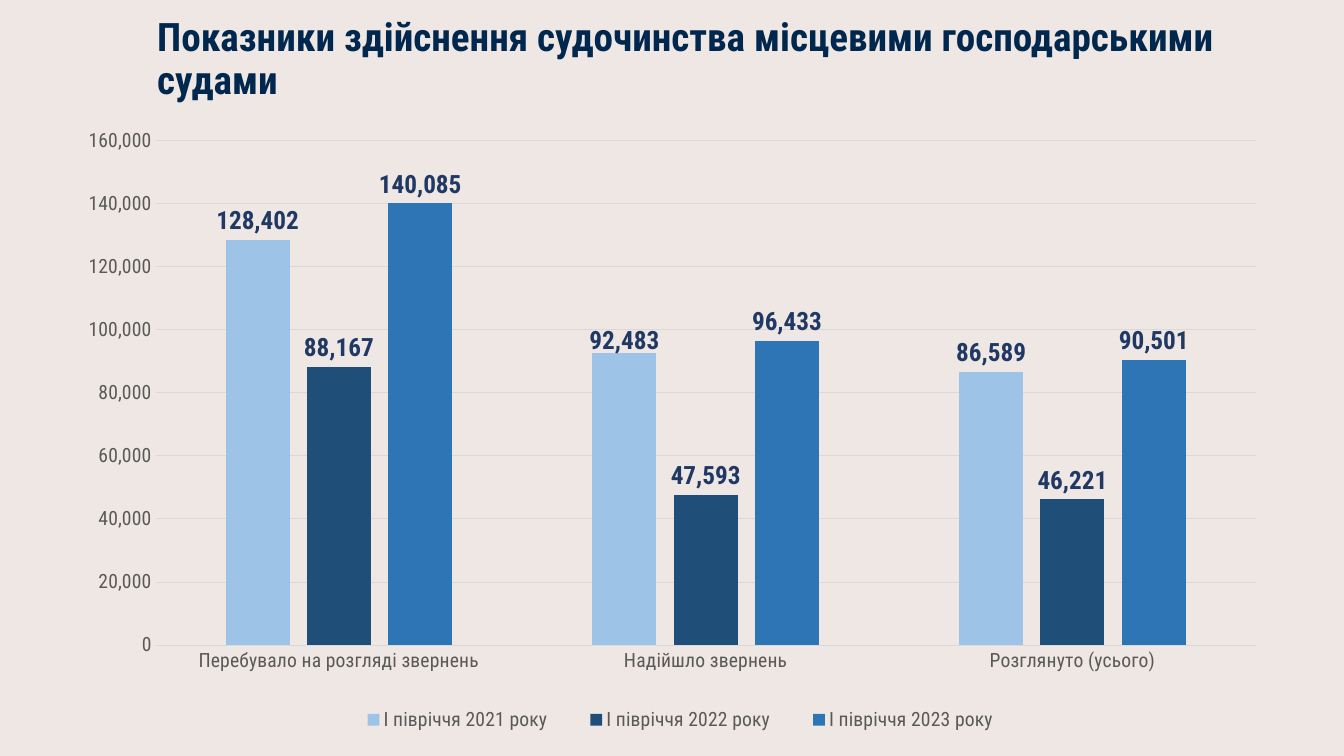
from dataclasses import dataclass

from lxml import etree
from pptx import Presentation
from pptx.chart.data import CategoryChartData
from pptx.dml.color import RGBColor
from pptx.enum.chart import XL_CHART_TYPE, XL_LABEL_POSITION, XL_LEGEND_POSITION, XL_TICK_MARK
from pptx.enum.text import MSO_ANCHOR, MSO_AUTO_SIZE, PP_ALIGN
from pptx.util import Inches, Pt

COLUMNS = XL_CHART_TYPE.COLUMN_CLUSTERED
OUTSIDE_END = XL_LABEL_POSITION.OUTSIDE_END
BOTTOM = XL_LEGEND_POSITION.BOTTOM
NO_TICK = XL_TICK_MARK.NONE
MIDDLE = MSO_ANCHOR.MIDDLE
NO_FIT = MSO_AUTO_SIZE.NONE
LEFT = PP_ALIGN.LEFT

WIDTH, HEIGHT = Inches(13.33), Inches(7.5)
TITLE_ONLY = 5
FONT = "Roboto Condensed"
NUMBER_FORMAT = "#,##0"
CHART_NS = "http://schemas.openxmlformats.org/drawingml/2006/chart"
COLORS = {
    "background": "EFE7E3",
    "title": "00274E",
    "axis": "595959",
    "grid": "D9D9D9",
    "label": "203864",
    "light": "9DC3E6",
    "dark": "1F4E79",
    "medium": "2E75B6",
}


@dataclass(frozen=True)
class Area:
    """Place given as percentages of the slide's width and height."""
    left: float
    top: float
    width: float
    height: float

    def lengths(self) -> tuple[int, int, int, int]:
        return (int(WIDTH * self.left / 100), int(HEIGHT * self.top / 100),
                int(WIDTH * self.width / 100), int(HEIGHT * self.height / 100))


@dataclass(frozen=True)
class Period:
    name: str
    values: tuple[int, int, int]
    color: str


TITLE = "Показники здійснення судочинства місцевими господарськими судами"
TITLE_AREA = Area(10.95, 2.93, 88.22, 10.13)
CHART_AREA = Area(4.95, 15.6, 89.57, 82.93)
STAGES = ("Перебувало на розгляді звернень", "Надійшло звернень", "Розглянуто (усього)")
PERIODS = (
    Period("І півріччя 2021 року", (128402, 92483, 86589), "light"),
    Period("І півріччя 2022 року", (88167, 47593, 46221), "dark"),
    Period("І півріччя 2023 року", (140085, 96433, 90501), "medium"),
)


def rgb(name: str) -> RGBColor:
    return RGBColor.from_string(COLORS[name])


def style_font(font, *, size: float, color: str, bold: bool = False) -> None:
    font.name, font.size, font.bold = FONT, Pt(size), bold
    font.color.rgb = rgb(color)


def write_text(frame, text: str, *, size: float, color: str, bold: bool = False,
               spacing: float = 1.0) -> None:
    para = frame.paragraphs[0]
    para.alignment, para.line_spacing = LEFT, spacing
    span = para.add_run()
    span.text = text
    style_font(span.font, size=size, color=color, bold=bold)


def make_layout(**settings: str | float):
    """Build a manual chart layout from its settings, in schema order."""
    layout = etree.Element(f"{{{CHART_NS}}}layout")
    manual = etree.SubElement(layout, f"{{{CHART_NS}}}manualLayout")
    for key, value in settings.items():
        etree.SubElement(manual, f"{{{CHART_NS}}}{key}", val=str(value))
    return layout


def style_axes(chart) -> None:
    for axis in (chart.category_axis, chart.value_axis):
        axis.major_tick_mark = axis.minor_tick_mark = NO_TICK
        style_font(axis.tick_labels.font, size=14, color="axis")
    amounts = chart.value_axis
    amounts.minimum_scale, amounts.maximum_scale, amounts.major_unit = 0, 160000, 20000
    amounts.tick_labels.number_format = NUMBER_FORMAT
    amounts.tick_labels.number_format_is_linked = False
    amounts.format.line.fill.background()
    for line in (chart.category_axis.format.line, amounts.major_gridlines.format.line):
        line.color.rgb, line.width = rgb("grid"), Pt(0.75)


def style_series(series, period: Period) -> None:
    series.format.fill.solid()
    series.format.fill.fore_color.rgb = rgb(period.color)
    series.invert_if_negative = False
    labels = series.data_labels
    labels.show_value, labels.position = True, OUTSIDE_END
    labels.number_format, labels.number_format_is_linked = NUMBER_FORMAT, False
    style_font(labels.font, size=18, color="label", bold=True)


def lower_label(series, point: int, shift: float) -> None:
    label = series.points[point].data_label
    style_font(label.font, size=18, color="label", bold=True)
    label.position = OUTSIDE_END
    index = series.data_labels._element.find(f"{{{CHART_NS}}}dLbl/{{{CHART_NS}}}idx")
    index.addnext(make_layout(x=0, y=shift))


def place_parts(chart) -> None:
    plot_area = chart._chartSpace.chart.plotArea
    for old in plot_area.findall(f"{{{CHART_NS}}}layout"):
        plot_area.remove(old)
    plot_area.insert(0, make_layout(layoutTarget="inner", xMode="edge", yMode="edge",
                                    x=0.074, y=0.036, w=0.914, h=0.805))
    legend = chart.legend._element
    for old in legend.findall(f"{{{CHART_NS}}}layout"):
        legend.remove(old)
    position = legend.find(f"{{{CHART_NS}}}legendPos")
    position.addnext(make_layout(xMode="edge", yMode="edge", x=0.22, y=0.93, w=0.58, h=0.06))


def add_court_chart(page) -> None:
    data = CategoryChartData(number_format=NUMBER_FORMAT)
    data.categories = STAGES
    for period in PERIODS:
        data.add_series(period.name, period.values)
    chart = page.shapes.add_chart(COLUMNS, *CHART_AREA.lengths(), data).chart
    chart.has_title = False
    style_font(chart.font, size=14, color="axis")
    plot = chart.plots[0]
    plot.gap_width, plot.overlap, plot.vary_by_categories = 219, -27, False
    style_axes(chart)
    for series, period in zip(plot.series, PERIODS):
        style_series(series, period)
    lower_label(plot.series[0], 1, 0.01)
    chart.has_legend = True
    chart.legend.position, chart.legend.include_in_layout = BOTTOM, False
    style_font(chart.legend.font, size=14, color="axis")
    place_parts(chart)


def add_title(page) -> None:
    box = page.shapes.title
    box.left, box.top, box.width, box.height = TITLE_AREA.lengths()
    frame = box.text_frame
    frame.word_wrap, frame.auto_size, frame.vertical_anchor = True, NO_FIT, MIDDLE
    write_text(frame, TITLE, size=28, color="title", bold=True, spacing=0.9)


def main() -> None:
    deck = Presentation()
    deck.slide_width, deck.slide_height = WIDTH, HEIGHT
    page = deck.slides.add_slide(deck.slide_layouts[TITLE_ONLY])
    page.background.fill.solid()
    page.background.fill.fore_color.rgb = rgb("background")
    # Chart of the three half-years
    add_court_chart(page)
    # Slide title
    add_title(page)
    deck.save("out.pptx")


if __name__ == "__main__":
    main()
